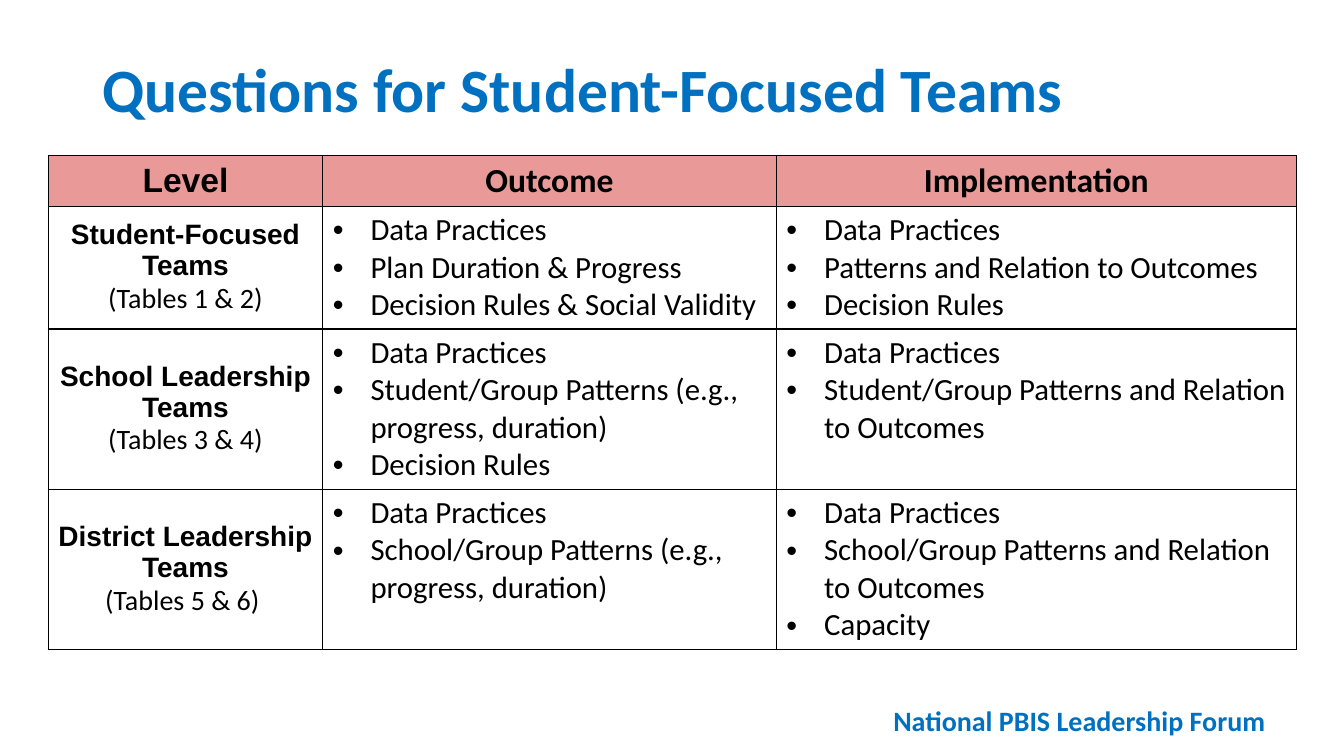
from lxml import etree
from pptx import Presentation
from pptx.dml.color import RGBColor
from pptx.enum.text import MSO_ANCHOR, PP_ALIGN
from pptx.oxml.ns import qn
from pptx.util import Pt

MIDDLE, TOP = MSO_ANCHOR.MIDDLE, MSO_ANCHOR.TOP
CENTER, LEFT = PP_ALIGN.CENTER, PP_ALIGN.LEFT
BLUE, BLACK, RED, WHITE = "0070C0", "000000", "CC0000", "FFFFFF"


def write(p, text, align, color, **font):
    p.alignment = align
    r = p.add_run()
    r.text = text
    r.font.color.rgb = RGBColor.from_string(color)
    for name, value in font.items():
        setattr(r.font, name, value)


def style_cell(cell, color, alpha):
    cell.fill.solid()
    cell.fill.fore_color.rgb = RGBColor.from_string(color)
    tcPr = cell._tc.get_or_add_tcPr()
    srgb = tcPr.find(".//" + qn("a:srgbClr"))
    etree.SubElement(srgb, qn("a:alpha"), val=str(alpha * 1000))
    for i, side in enumerate(("lnL", "lnR", "lnT", "lnB")):
        ln = etree.Element(qn("a:" + side), w=str(Pt(1)))
        fill = etree.SubElement(ln, qn("a:solidFill"))
        etree.SubElement(fill, qn("a:srgbClr"), val=BLACK)
        tcPr.insert(i, ln)


prs = Presentation()
prs.slide_width, prs.slide_height = Pt(960), Pt(540)
s = prs.slides.add_slide(prs.slide_layouts[5])

# Title
title = s.shapes.title
title.left, title.top, title.width, title.height = Pt(66), Pt(29), Pt(828), Pt(68)
tf = title.text_frame
tf.vertical_anchor = MIDDLE
write(tf.paragraphs[0], "Questions for Student-Focused Teams", LEFT, BLUE,
      name="Calibri", size=Pt(44), bold=True)

# Forum name at the bottom right
sp = s.shapes.add_textbox(Pt(603.5), Pt(499), Pt(335), Pt(31.5))
sp.text_frame.word_wrap = True
write(sp.text_frame.paragraphs[0], "National PBIS Leadership Forum", CENTER, BLUE,
      name="Calibri", size=Pt(20), bold=True)

# Table content: level, tables, outcome, implementation
headers = [("Level", "Arial"), ("Outcome", "Calibri"), ("Implementation", "Calibri")]
levels = [
    ("Student-Focused Teams", "(Tables 1 & 2)",
     ["Data Practices", "Plan Duration & Progress", "Decision Rules & Social Validity"],
     ["Data Practices", "Patterns and Relation to Outcomes", "Decision Rules"]),
    ("School Leadership Teams", "(Tables 3 & 4)",
     ["Data Practices", "Student/Group Patterns (e.g., progress, duration)", "Decision Rules"],
     ["Data Practices", "Student/Group Patterns and Relation to Outcomes"]),
    ("District Leadership Teams", "(Tables 5 & 6) ",
     ["Data Practices", "School/Group Patterns (e.g., progress, duration)"],
     ["Data Practices", "School/Group Patterns and Relation to Outcomes", "Capacity"]),
]
widths = [196, 324, 371.5]
heights = [36.5, 87.5, 114.5, 114.5]

# Table grid
table = s.shapes.add_table(len(heights), len(widths), Pt(34.5), Pt(111),
                           Pt(sum(widths)), Pt(sum(heights))).table
table.first_row = table.horz_banding = False
for column, width in zip(table.columns, widths):
    column.width = Pt(width)
for row, height in zip(table.rows, heights):
    row.height = Pt(height)

# Header row
for col, (text, face) in enumerate(headers):
    cell = table.cell(0, col)
    style_cell(cell, RED, 40)
    cell.vertical_anchor = MIDDLE
    write(cell.text_frame.paragraphs[0], text, CENTER, BLACK,
          name=face, size=Pt(24), bold=True)

# Level rows
for row, (level, tables, *lists) in enumerate(levels, 1):
    cell = table.cell(row, 0)
    style_cell(cell, WHITE, 80)
    cell.vertical_anchor = MIDDLE
    tf = cell.text_frame
    write(tf.paragraphs[0], level, CENTER, BLACK, name="Arial", size=Pt(20), bold=True)
    write(tf.add_paragraph(), tables, CENTER, BLACK, name="Calibri", size=Pt(20), bold=False)

    # Bulleted questions
    for col, items in enumerate(lists, 1):
        cell = table.cell(row, col)
        style_cell(cell, WHITE, 80)
        cell.vertical_anchor = TOP
        tf = cell.text_frame
        for i, item in enumerate(items):
            p = tf.add_paragraph() if i else tf.paragraphs[0]
            pPr = p._p.get_or_add_pPr()
            pPr.set("marL", str(Pt(27)))
            pPr.set("indent", str(-Pt(27)))
            etree.SubElement(pPr, qn("a:buFont"), typeface="Arial")
            etree.SubElement(pPr, qn("a:buChar"), char="•")
            write(p, item, LEFT, BLACK, name="Calibri", size=Pt(22), bold=False)

prs.save("out.pptx")
